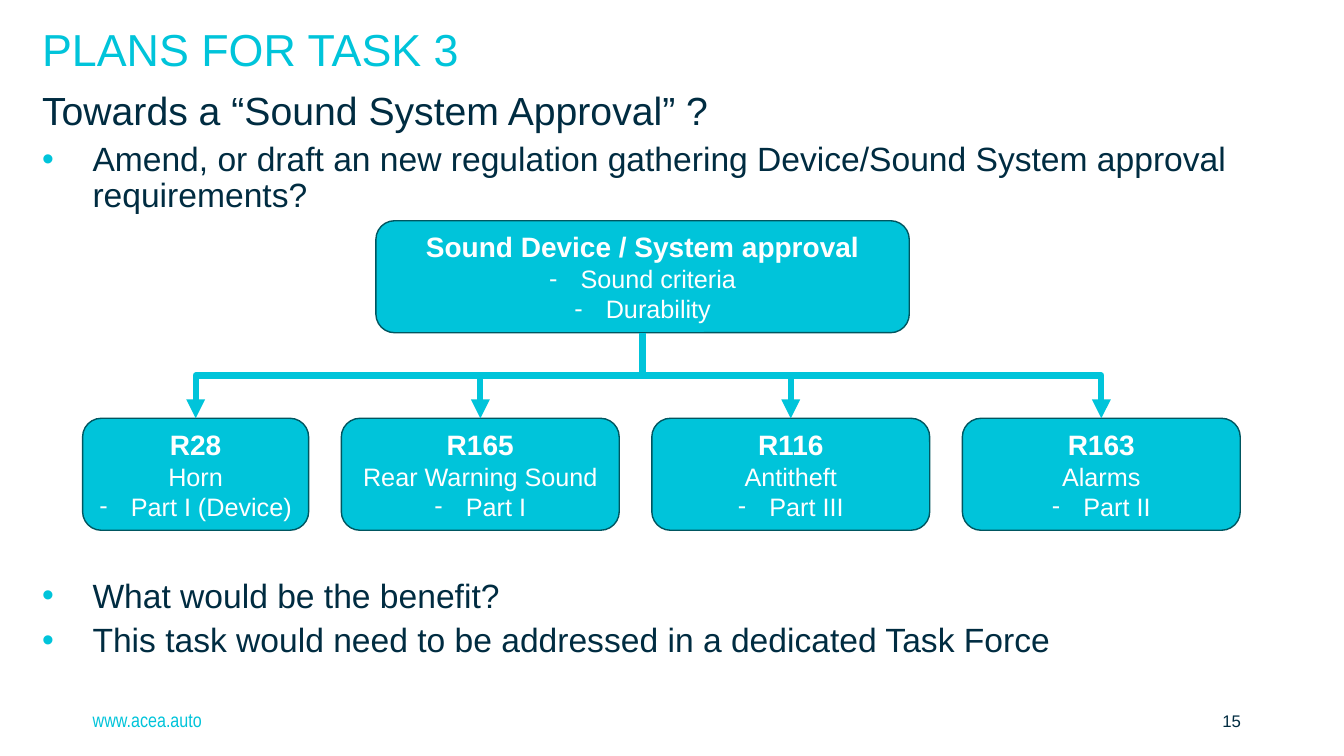
from dataclasses import dataclass

from lxml.etree import SubElement
from pptx import Presentation
from pptx.dml.color import RGBColor
from pptx.enum.shapes import MSO_CONNECTOR, MSO_SHAPE
from pptx.enum.text import MSO_ANCHOR, PP_ALIGN
from pptx.oxml.ns import qn
from pptx.util import Pt


@dataclass
class Theme:
    cyan: RGBColor = RGBColor.from_string("00C4DA")
    navy: RGBColor = RGBColor.from_string("002C41")
    teal: RGBColor = RGBColor.from_string("005660")
    white: RGBColor = RGBColor.from_string("FFFFFF")
    font: str = "Arial"
    narrow: str = "Arial Narrow"
    title: int = 32
    lead: int = 28
    body: int = 24
    head: int = 20
    item: int = 18
    foot: int = 14
    page: int = 12


theme = Theme()
deck = Presentation()
deck.slide_width, deck.slide_height = Pt(960), Pt(540)
slide = deck.slides.add_slide(deck.slide_layouts[6])
shapes = slide.shapes


def write(frame, lines, color, align=PP_ALIGN.LEFT, font=theme.font, dent=0, gap=0, space=1.0):
    """Fill a frame with lines of (text, size, bold, bullet sign)."""
    frame.word_wrap = True
    for i, (text, size, bold, sign) in enumerate(lines):
        para = frame.add_paragraph() if i else frame.paragraphs[0]
        para.text = text
        if sign:
            props = para._p.get_or_add_pPr()
            props.set("marL", str(Pt(dent)))
            props.set("indent", str(Pt(-dent)))
            if sign == "•":
                tint = SubElement(props, qn("a:buClr"))
                SubElement(tint, qn("a:srgbClr"), val=str(theme.cyan))
            SubElement(props, qn("a:buFont"), typeface=theme.font)
            SubElement(props, qn("a:buChar"), char=sign)
        para.alignment = align
        para.line_spacing = space
        para.space_before = Pt(gap if i else 0)
        para.font.name, para.font.size, para.font.bold = font, Pt(size), bold
        para.font.color.rgb = color


def box(left, top, width, height, lines):
    card = shapes.add_shape(
        MSO_SHAPE.ROUNDED_RECTANGLE, Pt(left), Pt(top), Pt(width), Pt(height))
    card.shadow.inherit = False
    card.fill.solid()
    card.fill.fore_color.rgb = theme.cyan
    card.line.color.rgb = theme.teal
    card.line.width = Pt(1)
    card.text_frame.vertical_anchor = MSO_ANCHOR.MIDDLE
    write(card.text_frame, lines, theme.white, PP_ALIGN.CENTER, dent=22.5)
    return card


# Title and body text
title = shapes.add_textbox(Pt(23), Pt(16), Pt(828), Pt(56))
write(title.text_frame, [("PLANS FOR TASK 3", theme.title, False, "")], theme.cyan, space=0.9)

intro = [
    ("Towards a “Sound System Approval” ?", theme.lead, False, ""),
    ("Amend, or draft an new regulation gathering Device/Sound System approval requirements?",
     theme.body, False, "•"),
]
close = [
    ("What would be the benefit?", theme.body, False, "•"),
    ("This task would need to be addressed in a dedicated Task Force", theme.body, False, "•"),
]
for top, height, lines in [(62, 96, intro), (410, 70, close)]:
    body = shapes.add_textbox(Pt(23), Pt(top), Pt(937), Pt(height))
    write(body.text_frame, lines, theme.navy, dent=36, gap=6, space=0.9)

# Tree of approvals
root = box(268.5, 157.7, 381, 80, [
    ("Sound Device / System approval", theme.head, True, ""),
    ("Sound criteria", theme.item, False, "-"),
    ("Durability", theme.item, False, "-"),
])
rules = [
    ("R28", "Horn", "Part I (Device)", 161.5),
    ("R165", "Rear Warning Sound", "Part I", 198.5),
    ("R116", "Antitheft", "Part III", 198.5),
    ("R163", "Alarms", "Part II", 198.5),
]
left = 59
leaves = []
for name, topic, part, width in rules:
    leaves.append(box(left, 298.8, width, 80, [
        (name, theme.head, True, ""),
        (topic, theme.item, False, ""),
        (part, theme.item, False, "-"),
    ]))
    left += width + 23.3

# Elbow arrows: a turned frame makes each one leave and arrive vertically
start = root.left + root.width // 2
base = root.top + root.height
for leaf in leaves:
    end = leaf.left + leaf.width // 2
    drop, span = leaf.top - base, abs(end - start)
    arrow = shapes.add_connector(MSO_CONNECTOR.ELBOW, start, base, end, leaf.top)
    arrow.begin_connect(root, 2)
    arrow.end_connect(leaf, 0)
    arrow.left = (start + end - drop) // 2
    arrow.top = (base + leaf.top - span) // 2
    arrow.width, arrow.height = drop, span
    right = end > start
    props = arrow._element.spPr
    props.xfrm.set("rot", str((270 if right else 90) * 60000))
    props.xfrm.set("flipH", "1" if right else "0")
    props.xfrm.set("flipV", "0")
    arrow.line.color.rgb = theme.cyan
    arrow.line.width = Pt(4.5)
    SubElement(arrow.line._get_or_add_ln(), qn("a:tailEnd"), type="triangle")
    SubElement(props, qn("a:effectLst"))

# Footer
site = shapes.add_textbox(Pt(66.2), Pt(499.7), Pt(111.6), Pt(28.8))
site.text_frame.margin_left = 0
write(site.text_frame, [("www.acea.auto", theme.foot, False, "")], theme.cyan, font=theme.narrow)
page = shapes.add_textbox(Pt(836.6), Pt(500.4), Pt(56.9), Pt(28.8))
write(page.text_frame, [("15", theme.page, False, "")], theme.navy, PP_ALIGN.RIGHT)
for note in (site, page):
    note.text_frame.vertical_anchor = MSO_ANCHOR.MIDDLE

deck.save("out.pptx")
